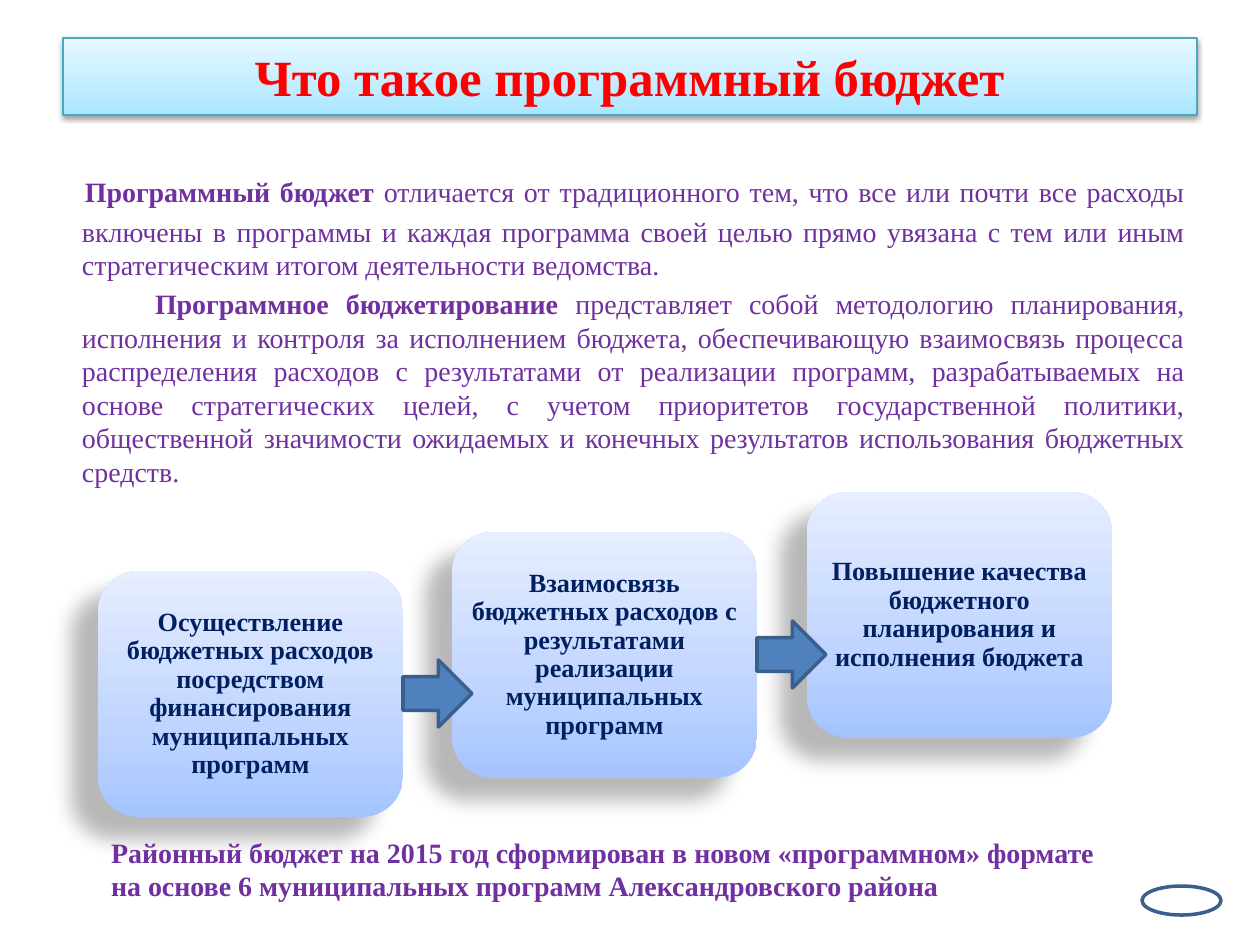
from lxml import etree
from pptx import Presentation
from pptx.dml.color import RGBColor
from pptx.enum.shapes import MSO_SHAPE
from pptx.enum.text import MSO_ANCHOR, PP_ALIGN
from pptx.oxml.ns import qn
from pptx.util import Pt

RECT, ROUND = MSO_SHAPE.RECTANGLE, MSO_SHAPE.ROUNDED_RECTANGLE
OVAL, ARROW = MSO_SHAPE.OVAL, MSO_SHAPE.DOWN_ARROW
TOP, MIDDLE = MSO_ANCHOR.TOP, MSO_ANCHOR.MIDDLE
LEFT, CENTER, FULL = PP_ALIGN.LEFT, PP_ALIGN.CENTER, PP_ALIGN.JUSTIFY
FONT = "Times New Roman"
PURPLE, NAVY, RED = "7030A0", "002060", "FF0000"
BLUE, EDGE, TEAL, WHITE = "4F81BD", "3A5F8C", "46AAC5", "FFFFFF"
AQUA = ("A7E6FF", "C1EDFF", "E7F8FF")
SKY = ("A4C4FF", "BFD4FF", "E6EEFF")

TITLE = "Что такое программный бюджет"
BODY = [
    ("Программный бюджет ",
     "отличается от традиционного тем, что все или почти все расходы включены "
     "в программы и каждая программа своей целью прямо увязана с тем или иным "
     "стратегическим итогом деятельности ведомства."),
    ("Программное бюджетирование ",
     "представляет собой методологию планирования, исполнения и контроля за "
     "исполнением бюджета, обеспечивающую взаимосвязь процесса распределения "
     "расходов с результатами от реализации программ, разрабатываемых на основе "
     "стратегических целей, с учетом приоритетов государственной политики, "
     "общественной значимости ожидаемых и конечных результатов использования "
     "бюджетных средств."),
]
STEPS = [
    "Осуществление бюджетных расходов посредством финансирования муниципальных программ",
    "Взаимосвязь бюджетных расходов с результатами реализации муниципальных программ",
    "Повышение качества бюджетного планирования и исполнения бюджета",
]
NOTE = ("Районный бюджет на 2015 год сформирован в новом «программном» формате "
        "на основе 6 муниципальных программ Александровского района")


def px(num):
    """Turn px into EMU."""
    return round(num * 914400 / 126)


def rgb(code):
    """Turn a hex string into a colour."""
    return RGBColor.from_string(code)


def put(item, **vals):
    """Set each named value on the item."""
    for name, val in vals.items():
        setattr(item, name, val)


def node(base, tag, **attrs):
    """Add a drawing element below the base."""
    return etree.SubElement(base, qn("a:" + tag), attrs)


def paint(base, code, **mods):
    """Add a colour element with its modifiers."""
    clr = node(base, "srgbClr", val=code)
    for tag, val in mods.items():
        node(clr, tag, val=str(val))


def shade(shape, codes):
    """Fill the shape with an upward gradient of three colours."""
    shape.fill.gradient()
    shape.fill.gradient_angle = 90
    stops = shape.fill._fill._gradFill.find(qn("a:gsLst"))
    for old in list(stops):
        stops.remove(old)
    for pos, code in zip((0, 35, 100), codes):
        paint(node(stops, "gs", pos=str(pos * 1000)), code)


def cast(shape, alpha, blur, dist, angle):
    """Give the shape an outer shadow."""
    fx = shape._element.spPr.find(qn("a:effectLst"))
    drop = node(fx, "outerShdw", blurRad=str(Pt(blur)), dist=str(Pt(dist)),
                dir=str(angle * 60000), algn="ctr", rotWithShape="0")
    paint(drop, "000000", alpha=alpha * 1000)


def form(slide, kind, box, fill=None, line=None, width=2):
    """Add a plain shape with its fill and line."""
    shape = slide.shapes.add_shape(kind, *map(px, box))
    shape.shadow.inherit = False
    if fill:
        shape.fill.solid()
        shape.fill.fore_color.rgb = rgb(fill)
    if line:
        shape.line.color.rgb = rgb(line)
        shape.line.width = Pt(width)
    else:
        shape.line.fill.background()
    return shape


def frame(shape, anchor=TOP, side=13, edge=6):
    """Set up the text frame of a shape."""
    text = shape.text_frame
    put(text, word_wrap=True, vertical_anchor=anchor,
        margin_left=px(side), margin_right=px(side),
        margin_top=px(edge), margin_bottom=px(edge))
    return text


def write(para, words, size, code, bold=True):
    """Add a run to the paragraph."""
    run = para.add_run()
    run.text = words
    put(run.font, name=FONT, size=Pt(size), bold=bold)
    run.font.color.rgb = rgb(code)


def dent(para, left, first):
    """Indent the paragraph and its first line."""
    props = para._p.get_or_add_pPr()
    props.set("marL", str(px(left)))
    props.set("indent", str(px(first)))


def banner(slide, box):
    """Draw the title bar."""
    bar = form(slide, RECT, box, line=TEAL, width=0.75)
    shade(bar, AQUA)
    cast(bar, 38, 3.1, 1.6, 90)
    para = frame(bar, MIDDLE).paragraphs[0]
    para.alignment = CENTER
    write(para, TITLE, 29, RED)


def prose(slide, box):
    """Write the two justified paragraphs."""
    text = frame(slide.shapes.add_textbox(*map(px, box)))
    for num, (lead, rest) in enumerate(BODY):
        para = text.add_paragraph() if num else text.paragraphs[0]
        put(para, alignment=FULL, space_before=Pt(3))
        dent(para, 48, 73 if num else -14)
        if not num:
            write(para, " ", 32, PURPLE, False)
        write(para, lead, 16, PURPLE)
        write(para, rest, 16, PURPLE, False)


def card(slide, box, words):
    """Draw one step with its text."""
    tile = form(slide, ROUND, box)
    shade(tile, SKY)
    cast(tile, 28, 11.8, 19.7, 141)
    para = frame(tile, MIDDLE, 4, 4).paragraphs[0]
    put(para, alignment=CENTER, line_spacing=0.9)
    write(para, words, 15, NAVY)


def stairs(slide, box):
    """Draw the rising steps and the arrows between them."""
    left, top, wide, high = box
    spots = [(left + 709 * num // 2, top - 79 * num // 2)
             for num in range(len(STEPS))]
    for (x, y), words in zip(spots, STEPS):
        card(slide, (x, y, wide, high), words)
    for x, y in spots[:-1]:
        mark = form(slide, ARROW, (x + wide + 1, y + 88, 67, 69), BLUE, EDGE)
        mark.rotation = 270


def footer(slide, box):
    """Write the closing note."""
    para = frame(slide.shapes.add_textbox(*map(px, box))).paragraphs[0]
    para.alignment = LEFT
    write(para, NOTE, 16, PURPLE)


def main():
    """Build and save the slide."""
    deck = Presentation()
    put(deck, slide_width=px(1260), slide_height=px(945))
    slide = deck.slides.add_slide(deck.slide_layouts[6])
    form(slide, OVAL, (1142, 886, 79, 29), WHITE, EDGE)
    prose(slide, (21, 141, 1177, 677))
    banner(slide, (63, 38, 1134, 77))
    stairs(slide, (98, 571, 305, 246))
    footer(slide, (98, 829, 1024, 81))
    deck.save("out.pptx")


if __name__ == "__main__":
    main()
